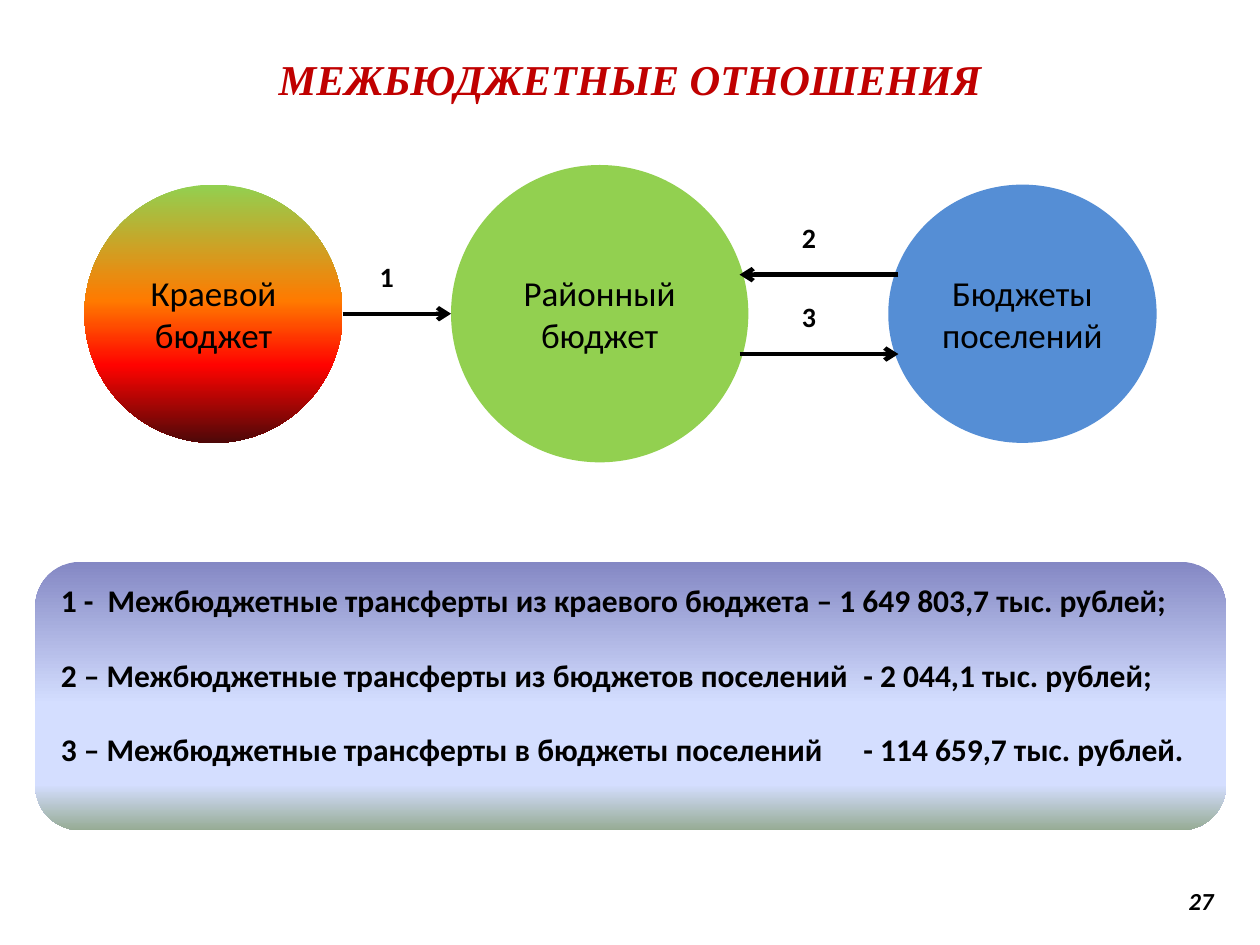
"""Build the slide on transfers between budget levels."""
from lxml import etree
from pptx import Presentation
from pptx.dml.color import RGBColor
from pptx.enum.shapes import MSO_CONNECTOR, MSO_SHAPE
from pptx.enum.text import MSO_ANCHOR, PP_ALIGN
from pptx.oxml.ns import qn
from pptx.util import Inches, Pt

OVAL, ROUND = MSO_SHAPE.OVAL, MSO_SHAPE.ROUNDED_RECTANGLE
LINE = MSO_CONNECTOR.STRAIGHT
MID, TOP = MSO_ANCHOR.MIDDLE, MSO_ANCHOR.TOP
LEFT, CENTER, RIGHT = PP_ALIGN.LEFT, PP_ALIGN.CENTER, PP_ALIGN.RIGHT

COLORS = {"text": "000000", "title": "C00000", "green": "92D050", "blue": "558ED5"}
FIRE = [(0, "92D050"), (45, "FF7A00"), (70, "FF0300"), (100, "4D0808")]
DAWN = [(0, "8488C4"), (53, "D4DEFF"), (83, "D4DEFF"), (100, "96AB94")]

TITLE = "МЕЖБЮДЖЕТНЫЕ ОТНОШЕНИЯ"
NUMBER = "27"
MIDDLE = 2.49
BUDGETS = [
    ("Краевой бюджет", 0.67, 2.05, 2.05, FIRE),
    ("Районный бюджет", 3.58, 2.36, 2.36, "green"),
    ("Бюджеты поселений", 7.05, 2.13, 2.05, "blue"),
]
FLOWS = [
    ("1", 2.72, 3.58, 2.49, 3.07),
    ("2", 7.13, 5.87, 2.18, 6.42),
    ("3", 5.87, 7.13, 2.81, 6.42),
]
NOTES = [
    "1 -  Межбюджетные трансферты из краевого бюджета – 1 649 803,7 тыс. рублей;",
    "2 – Межбюджетные трансферты из бюджетов поселений\t- 2 044,1 тыс. рублей;",
    "3 – Межбюджетные трансферты в бюджеты поселений\t- 114 659,7 тыс. рублей.",
]


def write(shape, lines, size, align=CENTER, anchor=MID, face="Calibri",
          color="text", bold=False, italic=False, gap=0, tab=None):
    frame = shape.text_frame
    frame.word_wrap = True
    frame.vertical_anchor = anchor
    for i, line in enumerate(lines):
        para = frame.add_paragraph() if i else frame.paragraphs[0]
        para.text = line
        para.alignment = align
        if i:
            para.space_before = Pt(gap)
        if tab:
            props = para._p.get_or_add_pPr()
            tabs = etree.SubElement(props, qn("a:tabLst"))
            etree.SubElement(tabs, qn("a:tab"), pos=str(Inches(tab)), algn="l")
        font = para.font
        font.name, font.size = face, Pt(size)
        font.bold, font.italic = bold, italic
        font.color.rgb = RGBColor.from_string(COLORS[color])


def add_text(slide, box, text, size, **style):
    shape = slide.shapes.add_textbox(*map(Inches, box))
    write(shape, [text], size, **style)


def add_shape(slide, kind, box, paint):
    shape = slide.shapes.add_shape(kind, *map(Inches, box))
    shape.shadow.inherit = False
    shape.line.fill.background()
    if isinstance(paint, str):
        shape.fill.solid()
        shape.fill.fore_color.rgb = RGBColor.from_string(COLORS[paint])
        return shape
    shape.fill.gradient()
    shape.fill.gradient_angle = 270
    stops = shape.element.spPr.find(".//" + qn("a:gsLst"))
    for old in list(stops):
        stops.remove(old)
    for place, color in paint:
        stop = etree.SubElement(stops, qn("a:gs"), pos=str(place * 1000))
        etree.SubElement(stop, qn("a:srgbClr"), val=color)
    return shape


def add_arrow(slide, start, end, y):
    arrow = slide.shapes.add_connector(LINE, *map(Inches, (start, y, end, y)))
    arrow.line.width = Pt(2.5)
    arrow.line.color.rgb = RGBColor.from_string(COLORS["text"])
    etree.SubElement(arrow.line._get_or_add_ln(), qn("a:tailEnd"), type="arrow")
    etree.SubElement(arrow.element.spPr, qn("a:effectLst"))


def main():
    deck = Presentation()
    deck.slide_width, deck.slide_height = Inches(10), Inches(7.5)
    slide = deck.slides.add_slide(deck.slide_layouts[6])
    add_text(slide, (0.5, 0.3, 9, 0.65), TITLE, 24.3, face="Times New Roman",
             color="title", bold=True, italic=True)
    for name, left, width, height, paint in BUDGETS:
        box = (left, MIDDLE - height / 2, width, height)
        write(add_shape(slide, OVAL, box, paint), [name], 20)
    for label, start, end, y, center in FLOWS:
        add_arrow(slide, start, end, y)
        add_text(slide, (center - 0.2, y - 0.48, 0.4, 0.36), label, 16, bold=True)
    panel = add_shape(slide, ROUND, (0.28, 4.46, 9.45, 2.13), DAWN)
    write(panel, NOTES, 18, align=LEFT, anchor=TOP, bold=True, gap=21, tab=6.37)
    add_text(slide, (7.17, 6.95, 2.56, 0.4), NUMBER, 14, align=RIGHT,
             bold=True, italic=True)
    deck.save("out.pptx")


if __name__ == "__main__":
    main()
